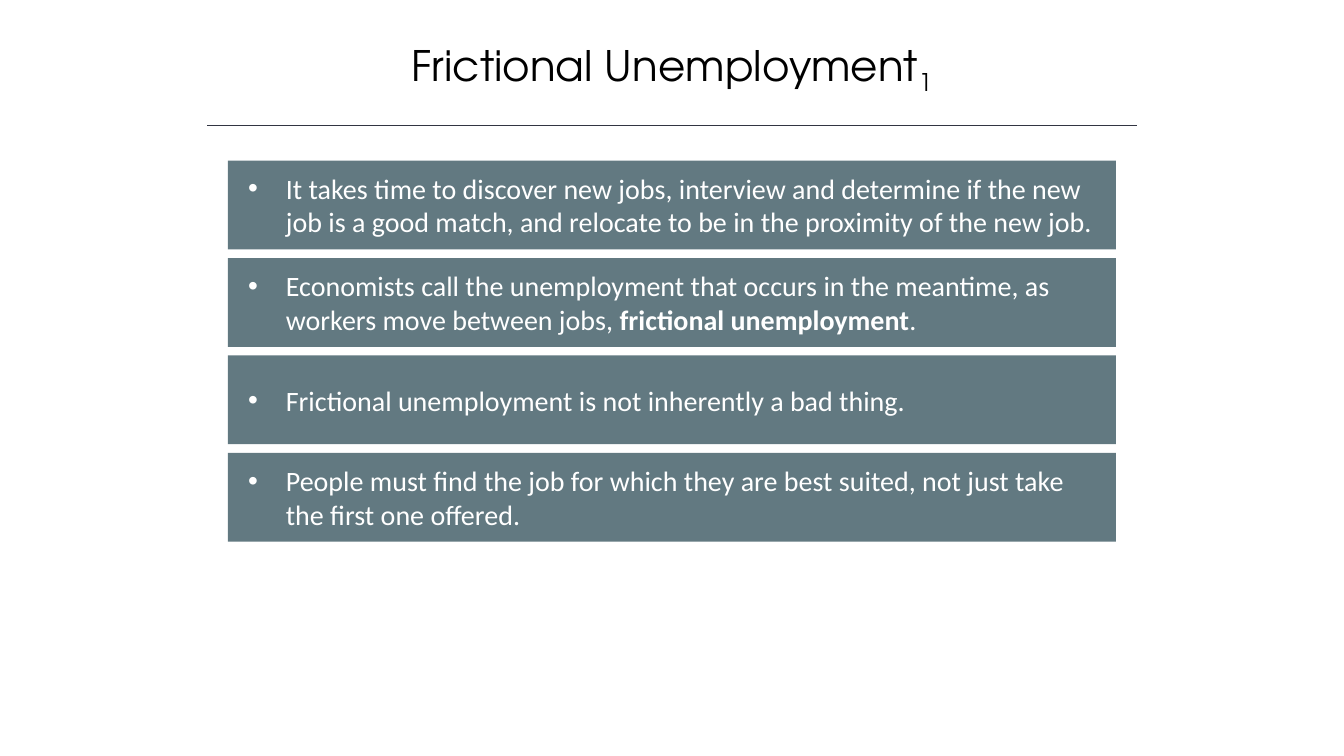
"""Build the slide on frictional unemployment."""
from lxml import etree
from pptx import Presentation
from pptx.dml.color import RGBColor
from pptx.enum.shapes import MSO_CONNECTOR, MSO_SHAPE
from pptx.enum.text import MSO_ANCHOR, MSO_AUTO_SIZE, PP_ALIGN
from pptx.oxml.ns import qn
from pptx.util import Pt

TITLE, TITLE_NUMBER = "Frictional Unemployment", "1"
POINTS = [
    [("It takes time to discover new jobs, interview and determine if the new "
      "job is a good match, and relocate to be in the proximity of the new job.", False)],
    [("Economists call the unemployment that occurs in the meantime, as workers "
      "move between jobs, ", False),
     ("frictional unemployment", True),
     (".", False)],
    [("Frictional unemployment is not inherently a bad thing.", False)],
    [("People must find the job for which they are best suited, not just take "
      "the first one offered.", False)],
]

BLACK = RGBColor(0x00, 0x00, 0x00)
WHITE = RGBColor(0xFF, 0xFF, 0xFF)
SLATE = RGBColor(0x62, 0x79, 0x81)
RULE_COLOR = RGBColor(0x32, 0x35, 0x42)
TITLE_FONT, BODY_FONT = "TeX Gyre Adventor", "Calibri"
RECTANGLE, STRAIGHT = MSO_SHAPE.RECTANGLE, MSO_CONNECTOR.STRAIGHT
MIDDLE, FIXED = MSO_ANCHOR.MIDDLE, MSO_AUTO_SIZE.NONE
CENTER, LEFT = PP_ALIGN.CENTER, PP_ALIGN.LEFT

SLIDE_W, SLIDE_H = 960, 540
TITLE_W, TITLE_TOP, TITLE_H = 720, 26.6, 44
RULE_W, RULE_Y = 664, 89.5
BAR_W, BAR_H, BAR_TOP, BAR_PITCH = 634.4, 63.4, 114.7, 69.6
BAR_INSET, BULLET_INDENT = 14.4, 27


def centered(width):
    return (SLIDE_W - width) / 2


def add_run(paragraph, text, font_name, size, color, bold=False):
    run = paragraph.add_run()
    run.text = text
    run.font.name = font_name
    run.font.size = Pt(size)
    run.font.color.rgb = color
    run.font.bold = bold
    return run


def add_title(slide):
    title = slide.shapes.title
    title.left, title.top = Pt(centered(TITLE_W)), Pt(TITLE_TOP)
    title.width, title.height = Pt(TITLE_W), Pt(TITLE_H)
    title.text_frame.auto_size = FIXED
    title.text_frame.vertical_anchor = MIDDLE
    heading = title.text_frame.paragraphs[0]
    heading.alignment = CENTER
    add_run(heading, TITLE, TITLE_FONT, 30, BLACK)
    number = add_run(heading, TITLE_NUMBER, TITLE_FONT, 30, BLACK)
    number.font._element.set("baseline", "-25000")


def add_rule(slide):
    left = centered(RULE_W)
    rule = slide.shapes.add_connector(
        STRAIGHT, Pt(left), Pt(RULE_Y), Pt(left + RULE_W), Pt(RULE_Y))
    rule.line.color.rgb = RULE_COLOR
    rule.line.width = Pt(1)
    etree.SubElement(rule._element.spPr, qn("a:effectLst"))


def add_bar(slide, top, pieces):
    bar = slide.shapes.add_shape(
        RECTANGLE, Pt(centered(BAR_W)), Pt(top), Pt(BAR_W), Pt(BAR_H))
    bar.shadow.inherit = False
    bar.fill.solid()
    bar.fill.fore_color.rgb = SLATE
    bar.line.fill.background()
    frame = bar.text_frame
    frame.word_wrap = True
    frame.vertical_anchor = MIDDLE
    frame.margin_left = frame.margin_right = Pt(BAR_INSET)
    point = frame.paragraphs[0]
    point.alignment = LEFT
    properties = point._p.get_or_add_pPr()
    properties.set("marL", str(Pt(BULLET_INDENT)))
    properties.set("indent", str(-Pt(BULLET_INDENT)))
    etree.SubElement(properties, qn("a:buFont")).set("typeface", "Arial")
    etree.SubElement(properties, qn("a:buChar")).set("char", "•")
    for text, bold in pieces:
        add_run(point, text, BODY_FONT, 20, WHITE, bold)


def main():
    deck = Presentation()
    deck.slide_width, deck.slide_height = Pt(SLIDE_W), Pt(SLIDE_H)
    slide = deck.slides.add_slide(deck.slide_layouts.get_by_name("Title Only"))
    add_title(slide)
    add_rule(slide)
    for row, pieces in enumerate(POINTS):
        add_bar(slide, BAR_TOP + row * BAR_PITCH, pieces)
    deck.save("out.pptx")


if __name__ == "__main__":
    main()
